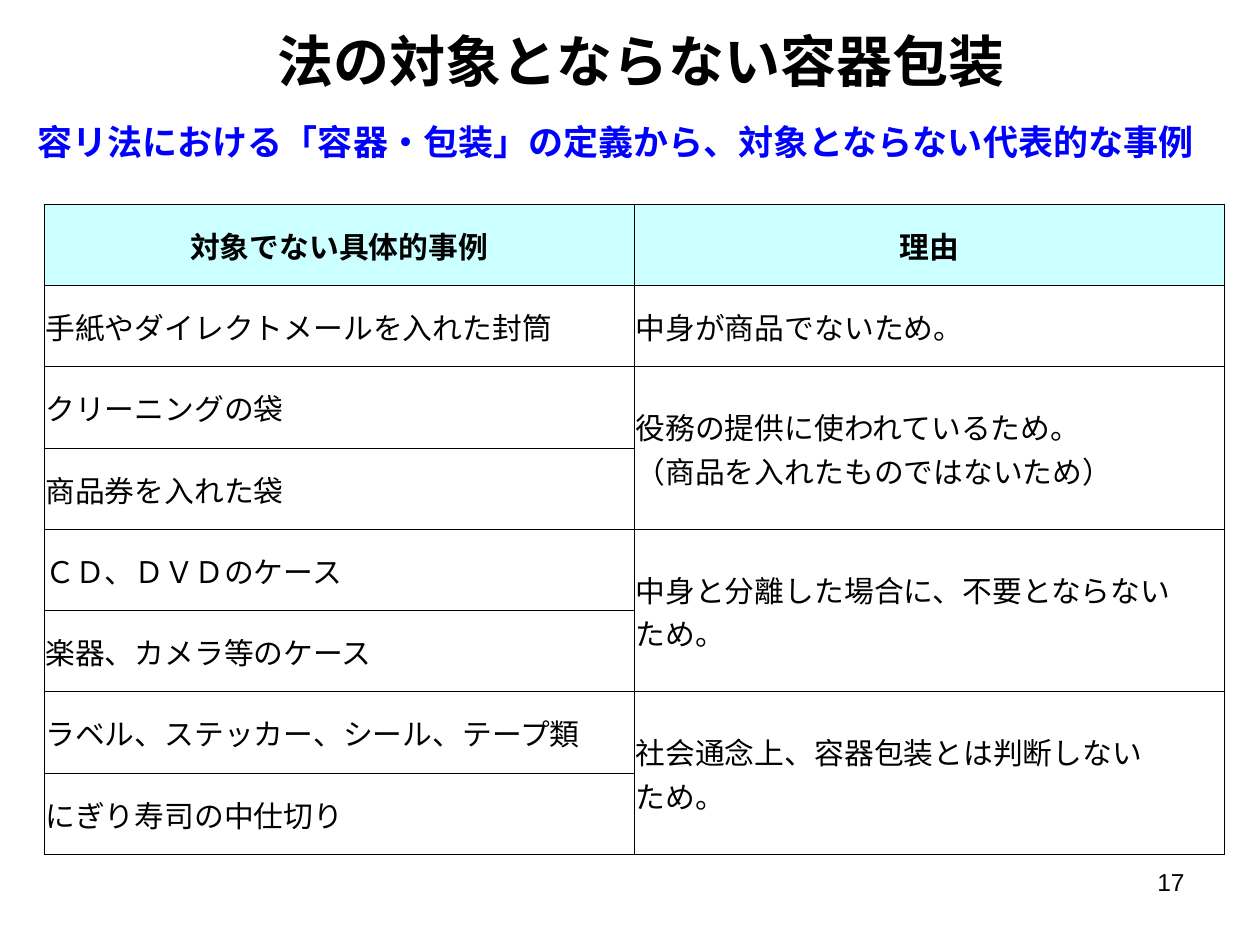
from lxml import etree
from pptx import Presentation
from pptx.dml.color import RGBColor
from pptx.enum.text import MSO_ANCHOR, MSO_AUTO_SIZE, PP_ALIGN
from pptx.oxml.ns import qn
from pptx.util import Inches, Pt

LEFT, MID, RIGHT = PP_ALIGN.LEFT, PP_ALIGN.CENTER, PP_ALIGN.RIGHT
CENTRE = MSO_ANCHOR.MIDDLE
FIXED = MSO_AUTO_SIZE.NONE
BLACK = RGBColor(0, 0, 0)
BLUE = RGBColor(0, 0, 255)
CYAN = RGBColor(204, 255, 255)
SANS, ARIAL = "Noto Sans CJK JP", "Arial"

HEAD = ["対象でない具体的事例", "理由"]
GROUPS = [
    (["手紙やダイレクトメールを入れた封筒"], ["中身が商品でないため。"]),
    (["クリーニングの袋", "商品券を入れた袋"],
     ["役務の提供に使われているため。", "（商品を入れたものではないため）"]),
    (["ＣＤ、ＤＶＤのケース", "楽器、カメラ等のケース"],
     ["中身と分離した場合に、不要とならない", "ため。"]),
    (["ラベル、ステッカー、シール、テープ類", "にぎり寿司の中仕切り"],
     ["社会通念上、容器包装とは判断しない", "ため。"]),
]


class Page:
    def __init__(self, deck):
        self.slide = deck.slides.add_slide(deck.slide_layouts[5])

    def lines(self, frame, lines, size, color=BLACK, bold=False, align=LEFT, font=SANS):
        for i, line in enumerate(lines):
            para = frame.add_paragraph() if i else frame.paragraphs[0]
            para.alignment = align
            run = para.add_run()
            run.text = line
            run.font.size = Pt(size)
            run.font.bold = bold
            run.font.color.rgb = color
            run.font.name = font
            props = run._r.get_or_add_rPr()
            etree.SubElement(props, qn("a:ea"), typeface=font)

    def title(self, text, x, y, w, h):
        shape = self.slide.shapes.title
        shape.left, shape.top = Inches(x), Inches(y)
        shape.width, shape.height = Inches(w), Inches(h)
        frame = shape.text_frame
        frame.auto_size = FIXED
        frame.vertical_anchor = CENTRE
        self.lines(frame, [text], 32, bold=True, align=MID)

    def text(self, text, x, y, w, h, size, **look):
        box = self.slide.shapes.add_textbox(Inches(x), Inches(y), Inches(w), Inches(h))
        box.text_frame.word_wrap = True
        self.lines(box.text_frame, [text], size, **look)

    def border(self, cell):
        props = cell._tc.get_or_add_tcPr()
        for side in ("lnL", "lnR", "lnT", "lnB"):
            line = etree.SubElement(props, qn(f"a:{side}"), w=str(Pt(0.5)))
            fill = etree.SubElement(line, qn("a:solidFill"))
            etree.SubElement(fill, qn("a:srgbClr"), val=str(BLACK))

    def cell(self, cell, lines, head=False):
        cell.vertical_anchor = CENTRE
        cell.margin_left = cell.margin_right = cell.margin_top = Inches(0.01)
        cell.margin_bottom = 0
        self.border(cell)
        if head:
            cell.fill.solid()
            cell.fill.fore_color.rgb = CYAN
        else:
            cell.fill.background()
        self.lines(cell.text_frame, lines, 17, bold=head, align=MID if head else LEFT)

    def table(self, head, groups, x, y, w, h):
        count = 1 + sum(len(cases) for cases, _ in groups)
        grid = self.slide.shapes.add_table(
            count, len(head), Inches(x), Inches(y), Inches(w), Inches(h)).table
        grid.first_row = grid.horz_banding = False
        for col, text in enumerate(head):
            self.cell(grid.cell(0, col), [text], head=True)
        row = 1
        for cases, reason in groups:
            for i, case in enumerate(cases):
                self.cell(grid.cell(row + i, 0), [case])
                self.cell(grid.cell(row + i, 1), [] if i else reason)
            last = row + len(cases) - 1
            if last > row:
                grid.cell(row, 1).merge(grid.cell(last, 1))
            row = last + 1


def main():
    deck = Presentation()
    deck.slide_width, deck.slide_height = Inches(10), Inches(7.5)
    page = Page(deck)
    page.title("法の対象とならない容器包装", 0.72, 0.21, 8.74, 0.54)
    page.text("容リ法における「容器・包装」の定義から、対象とならない代表的な事例",
              0.2, 0.91, 9.8, 0.44, 20, color=BLUE, bold=True)
    page.table(HEAD, GROUPS, 0.35, 1.62, 9.37, 5.16)
    page.text("17", 7.17, 6.83, 2.33, 0.52, 14, align=RIGHT, font=ARIAL)
    deck.save("out.pptx")


if __name__ == "__main__":
    main()
